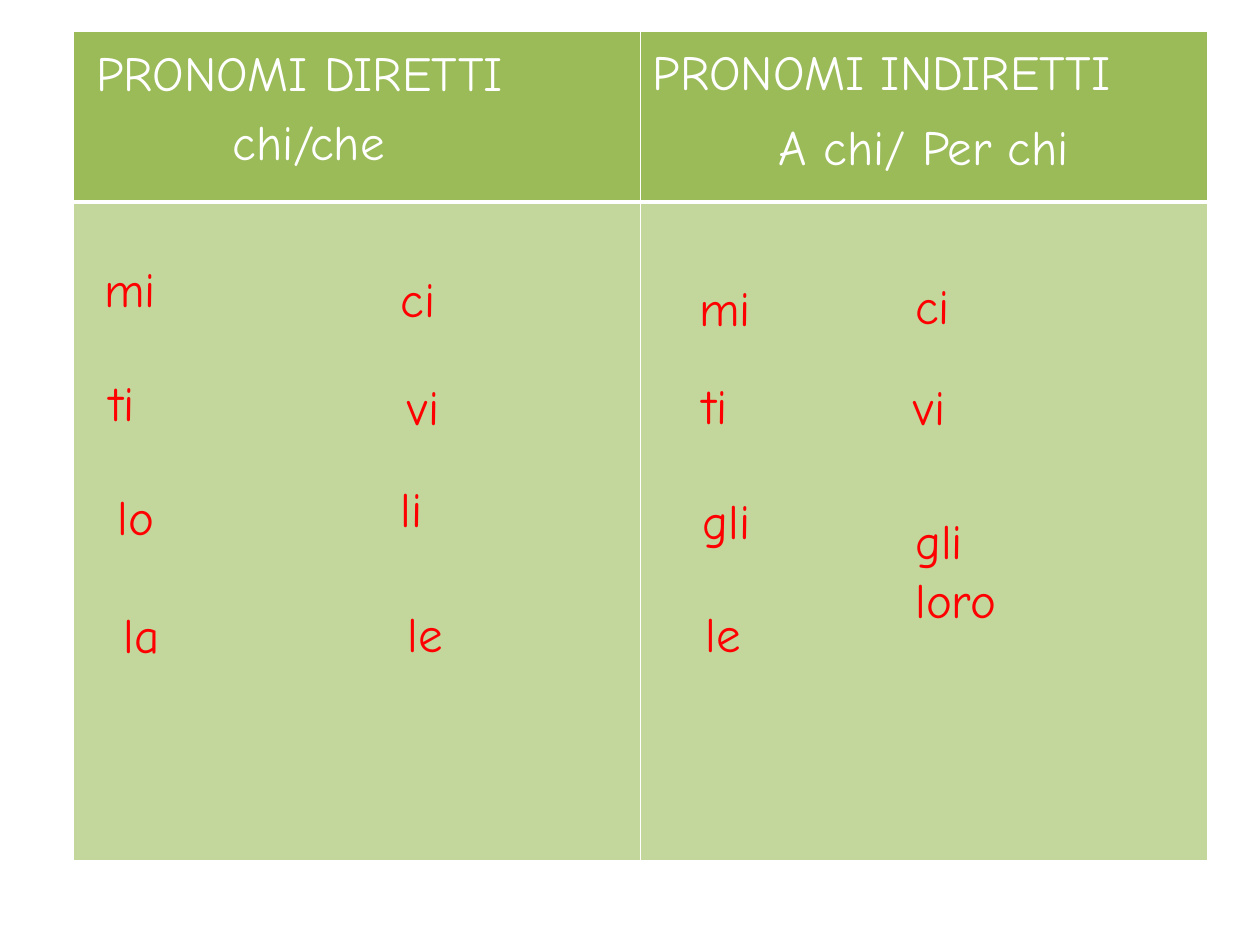
"""Build a slide comparing Italian direct and indirect pronouns."""
from lxml.etree import SubElement
from pptx import Presentation
from pptx.dml.color import RGBColor
from pptx.enum.text import MSO_AUTO_SIZE as AutoSize
from pptx.oxml.ns import qn
from pptx.util import Pt

WHITE = RGBColor(0xFF, 0xFF, 0xFF)
RED = RGBColor(0xFF, 0x00, 0x00)
GREEN = RGBColor(0x9B, 0xBB, 0x59)
LIGHT_GREEN = RGBColor(0xC3, 0xD6, 0x9B)
FONT = "Comic Neue"
LINE_HEIGHT = 41


def add_border(cell, side, width):
    line = SubElement(cell._tc.get_or_add_tcPr(), qn(f"a:ln{side}"), w=str(Pt(width)))
    fill = SubElement(line, qn("a:solidFill"))
    SubElement(fill, qn("a:srgbClr"), val=str(WHITE))


def add_label(slide, lines, left, top, width, color):
    shape = slide.shapes.add_textbox(Pt(left), Pt(top), Pt(width), Pt(LINE_HEIGHT * len(lines)))
    frame = shape.text_frame
    frame.word_wrap = True
    frame.auto_size = AutoSize.SHAPE_TO_FIT_TEXT
    for index, line in enumerate(lines):
        paragraph = frame.add_paragraph() if index else frame.paragraphs[0]
        run = paragraph.add_run()
        run.text = line
        run.font.name = FONT
        run.font.size = Pt(28)
        run.font.color.rgb = color


presentation = Presentation()
presentation.slide_width, presentation.slide_height = Pt(720), Pt(540)
slide = presentation.slides.add_slide(presentation.slide_layouts[6])

table = slide.shapes.add_table(2, 2, Pt(42), Pt(18), Pt(648), Pt(474)).table
rows = [(97.5, GREEN, 3), (376.5, LIGHT_GREEN, 1)]
for row, (height, color, bottom_width) in zip(table.rows, rows):
    row.height = Pt(height)
    for cell in row.cells:
        for side, width in zip("LRTB", (1, 1, 1, bottom_width)):
            add_border(cell, side, width)
        cell.fill.solid()
        cell.fill.fore_color.rgb = color

headings = [
    ("PRONOMI DIRETTI", 48, 21, 324),
    ("chi/che", 126, 60, 120),
    ("PRONOMI INDIRETTI", 366, 20, 324),
    ("A chi/ Per chi", 438, 63, 198),
]
for text, left, top, width in headings:
    add_label(slide, [text], left, top, width, WHITE)

pronouns = [
    (["mi"], 52.5, 144, 91.5),
    (["ti"], 55.5, 209.5, 91.5),
    (["lo"], 60, 274.5, 54),
    (["la"], 63.5, 342, 54),
    (["ci"], 222, 150, 91.5),
    (["vi"], 226, 211.5, 91.5),
    (["li"], 222, 270, 42),
    (["le"], 226, 341.5, 42),
    (["mi"], 392.5, 155, 91.5),
    (["ti"], 394.5, 211, 91.5),
    (["gli"], 394.5, 276.5, 54),
    (["le"], 396, 341.5, 54),
    (["ci"], 516, 154, 91.5),
    (["vi"], 515, 211.5, 91.5),
    (["gli", "loro"], 516, 288, 114),
]
for lines, left, top, width in pronouns:
    add_label(slide, lines, left, top, width, RED)

presentation.save("out.pptx")
